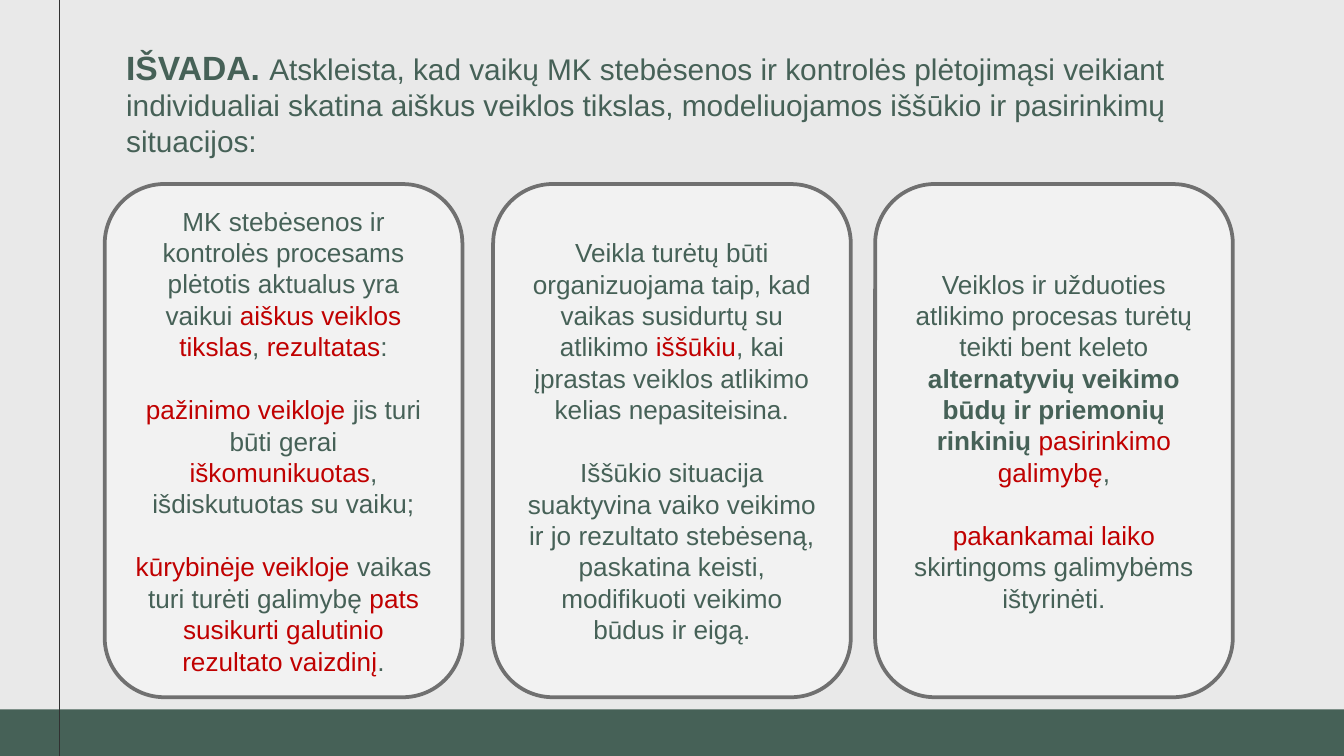
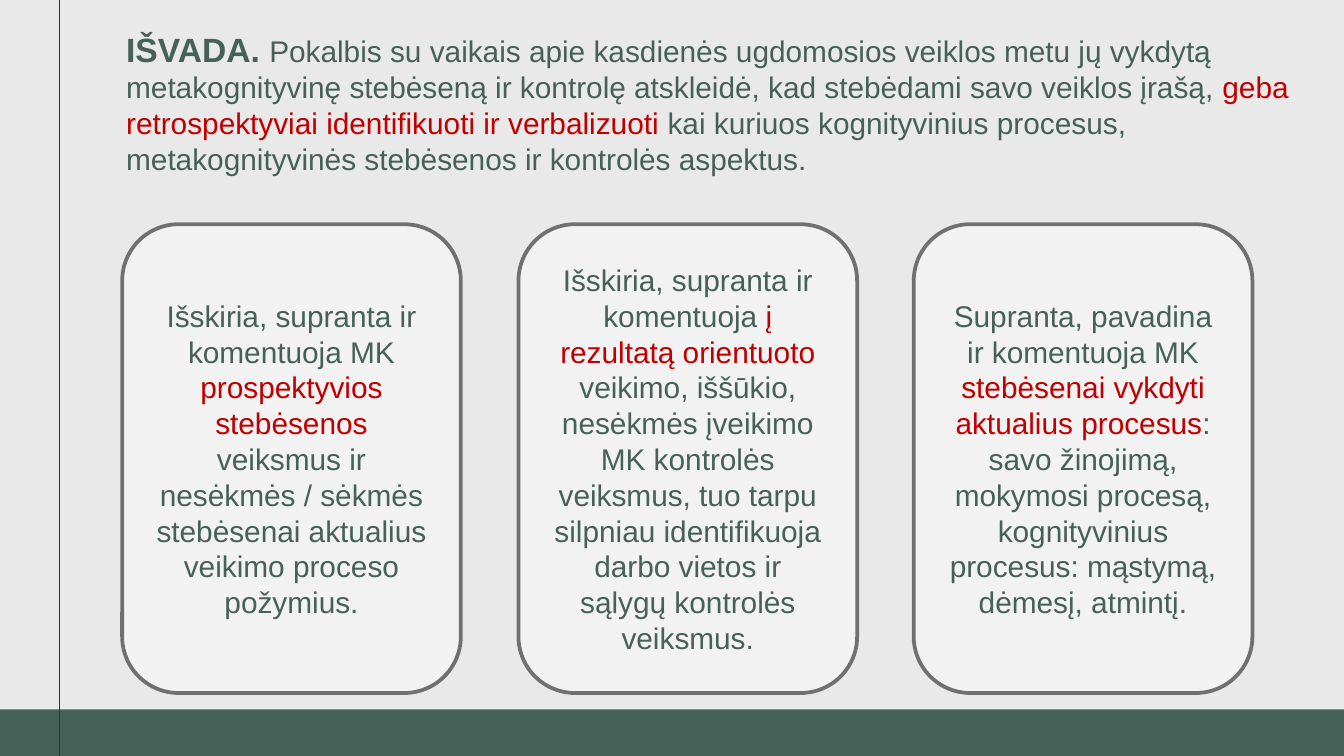
"""Build two conclusion slides, each with a heading and three rounded cards."""
from dataclasses import dataclass

from lxml.etree import SubElement
from pptx import Presentation
from pptx.dml.color import RGBColor
from pptx.enum.shapes import MSO_CONNECTOR, MSO_SHAPE
from pptx.enum.text import MSO_ANCHOR, MSO_AUTO_SIZE, PP_ALIGN
from pptx.oxml.ns import qn
from pptx.util import Cm, Pt


@dataclass(frozen=True)
class Theme:
    font: str = "Arial"
    background: str = "E9E9E9"
    green: str = "466157"
    red: str = "C00000"
    card: str = "F2F2F2"
    border: str = "707070"
    rule: str = "313131"
    lead_size: int = 18
    title_size: int = 16
    paragraph_gap: int = 17


THEME = Theme()
WIDTH, HEIGHT = 25.4, 14.29
BAND_TOP = 13.41
RULE_LEFT = 1.12
TITLE_BOX = (2.13, 0.71, 22.48, 3.05)
TITLE_BOTTOM_MARGIN = 0.72

PLAIN, KEY, STRONG, LEAD = "plain", "key", "strong", "lead"

PAGES = [
    {
        "title": [
            ("IŠVADA. ", LEAD),
            ("Atskleista, kad vaikų MK stebėsenos ir kontrolės plėtojimąsi veikiant individualiai "
             "skatina aiškus veiklos tikslas, modeliuojamos iššūkio ir pasirinkimų situacijos:", PLAIN),
        ],
        "lefts": (1.98, 9.32, 16.54), "top": 3.48, "size": (6.76, 9.7), "text_size": 14,
        "cards": [
            [
                [("MK stebėsenos ir kontrolės procesams plėtotis aktualus yra vaikui ", PLAIN),
                 ("aiškus veiklos tikslas", KEY), (", ", PLAIN), ("rezultatas", KEY), (":", PLAIN)],
                [("pažinimo veikloje ", KEY), ("jis turi būti gerai ", PLAIN),
                 ("iškomunikuotas", KEY), (", išdiskutuotas su vaiku;", PLAIN)],
                [("kūrybinėje veikloje ", KEY), ("vaikas turi turėti galimybę ", PLAIN),
                 ("pats susikurti galutinio rezultato vaizdinį", KEY), (".", PLAIN)],
            ],
            [
                [("Veikla turėtų būti organizuojama taip, kad vaikas susidurtų su atlikimo ", PLAIN),
                 ("iššūkiu", KEY),
                 (", kai įprastas veiklos atlikimo kelias nepasiteisina.", PLAIN)],
                [("Iššūkio situacija suaktyvina vaiko veikimo ir jo rezultato stebėseną, "
                  "paskatina keisti, modifikuoti veikimo būdus ir eigą.", PLAIN)],
            ],
            [
                [("Veiklos ir užduoties atlikimo procesas turėtų teikti bent keleto ", PLAIN),
                 ("alternatyvių veikimo būdų ir priemonių rinkinių ", STRONG),
                 ("pasirinkimo galimybę", KEY), (",", PLAIN)],
                [("pakankamai laiko ", KEY), ("skirtingoms galimybėms ištyrinėti.", PLAIN)],
            ],
        ],
    },
    {
        "title": [
            ("IŠVADA. ", LEAD),
            ("Pokalbis su vaikais apie kasdienės ugdomosios veiklos metu jų vykdytą metakognityvinę "
             "stebėseną ir kontrolę atskleidė, kad stebėdami savo veiklos įrašą, ", PLAIN),
            ("geba retrospektyviai identifikuoti ir verbalizuoti ", KEY),
            ("kai kuriuos kognityvinius procesus, metakognityvinės stebėsenos ir kontrolės aspektus.",
             PLAIN),
        ],
        "lefts": (2.31, 9.8, 17.27), "top": 4.24, "size": (6.4, 8.86), "text_size": 16,
        "cards": [
            [[("Išskiria, supranta ir komentuoja MK ", PLAIN), ("prospektyvios stebėsenos ", KEY),
              ("veiksmus ir nesėkmės / sėkmės stebėsenai aktualius veikimo proceso požymius.", PLAIN)]],
            [[("Išskiria, supranta ir komentuoja ", PLAIN), ("į rezultatą orientuoto ", KEY),
              ("veikimo, iššūkio, nesėkmės įveikimo MK kontrolės veiksmus, tuo tarpu silpniau "
               "identifikuoja darbo vietos ir sąlygų kontrolės veiksmus.", PLAIN)]],
            [[("Supranta, pavadina ir komentuoja MK ", PLAIN),
              ("stebėsenai vykdyti aktualius procesus", KEY),
              (": savo žinojimą, mokymosi procesą, kognityvinius procesus: mąstymą, dėmesį, atmintį.",
               PLAIN)]],
        ],
    },
]


def color(value):
    return RGBColor.from_string(value)


def write_spans(para, spans, size, align):
    para.alignment = align
    for text, style in spans:
        span = para.add_run()
        span.text = text
        span.font.name = THEME.font
        span.font.size = Pt(THEME.lead_size if style == LEAD else size)
        span.font.bold = style in (LEAD, STRONG)
        span.font.color.rgb = color(THEME.red if style == KEY else THEME.green)


def add_panel(page, kind, bounds, fill):
    panel = page.shapes.add_shape(kind, *map(Cm, bounds))
    panel.shadow.inherit = False
    panel.fill.solid()
    panel.fill.fore_color.rgb = color(fill)
    return panel


def decorate_layout(layout, page):
    """Draw the band and rule once and hand them to the shared layout."""
    layout.background.fill.solid()
    layout.background.fill.fore_color.rgb = color(THEME.background)
    band = add_panel(page, MSO_SHAPE.RECTANGLE, (0, BAND_TOP, WIDTH, HEIGHT - BAND_TOP), THEME.green)
    band.line.fill.background()
    rule = page.shapes.add_connector(
        MSO_CONNECTOR.STRAIGHT, Cm(RULE_LEFT), 0, Cm(RULE_LEFT), Cm(HEIGHT))
    rule.line.color.rgb = color(THEME.rule)
    rule.line.width = Pt(0.75)
    SubElement(rule.element.spPr, qn("a:effectLst"))
    for shape in (band, rule):
        layout.shapes.element.append(shape.element)


def add_title(page, spans):
    title = page.shapes.title
    title.left, title.top, title.width, title.height = map(Cm, TITLE_BOX)
    frame = title.text_frame
    frame.auto_size = MSO_AUTO_SIZE.NONE
    frame.vertical_anchor = MSO_ANCHOR.MIDDLE
    frame.margin_bottom = Cm(TITLE_BOTTOM_MARGIN)
    write_spans(frame.paragraphs[0], spans, THEME.title_size, PP_ALIGN.LEFT)


def add_card(page, bounds, paragraphs, size):
    card = add_panel(page, MSO_SHAPE.ROUNDED_RECTANGLE, bounds, THEME.card)
    card.line.color.rgb = color(THEME.border)
    card.line.width = Pt(2)
    frame = card.text_frame
    frame.word_wrap = True
    frame.vertical_anchor = MSO_ANCHOR.MIDDLE
    for index, spans in enumerate(paragraphs):
        para = frame.add_paragraph() if index else frame.paragraphs[0]
        para.space_before = Pt(THEME.paragraph_gap if index else 0)
        write_spans(para, spans, size, PP_ALIGN.CENTER)


def main():
    deck = Presentation()
    deck.slide_width, deck.slide_height = Cm(WIDTH), Cm(HEIGHT)
    layout = deck.slide_layouts[5]
    pages = [deck.slides.add_slide(layout) for _ in PAGES]
    decorate_layout(layout, pages[0])
    for page, content in zip(pages, PAGES):
        add_title(page, content["title"])
        for left, paragraphs in zip(content["lefts"], content["cards"]):
            bounds = (left, content["top"], *content["size"])
            add_card(page, bounds, paragraphs, content["text_size"])
    deck.save("out.pptx")


if __name__ == "__main__":
    main()
